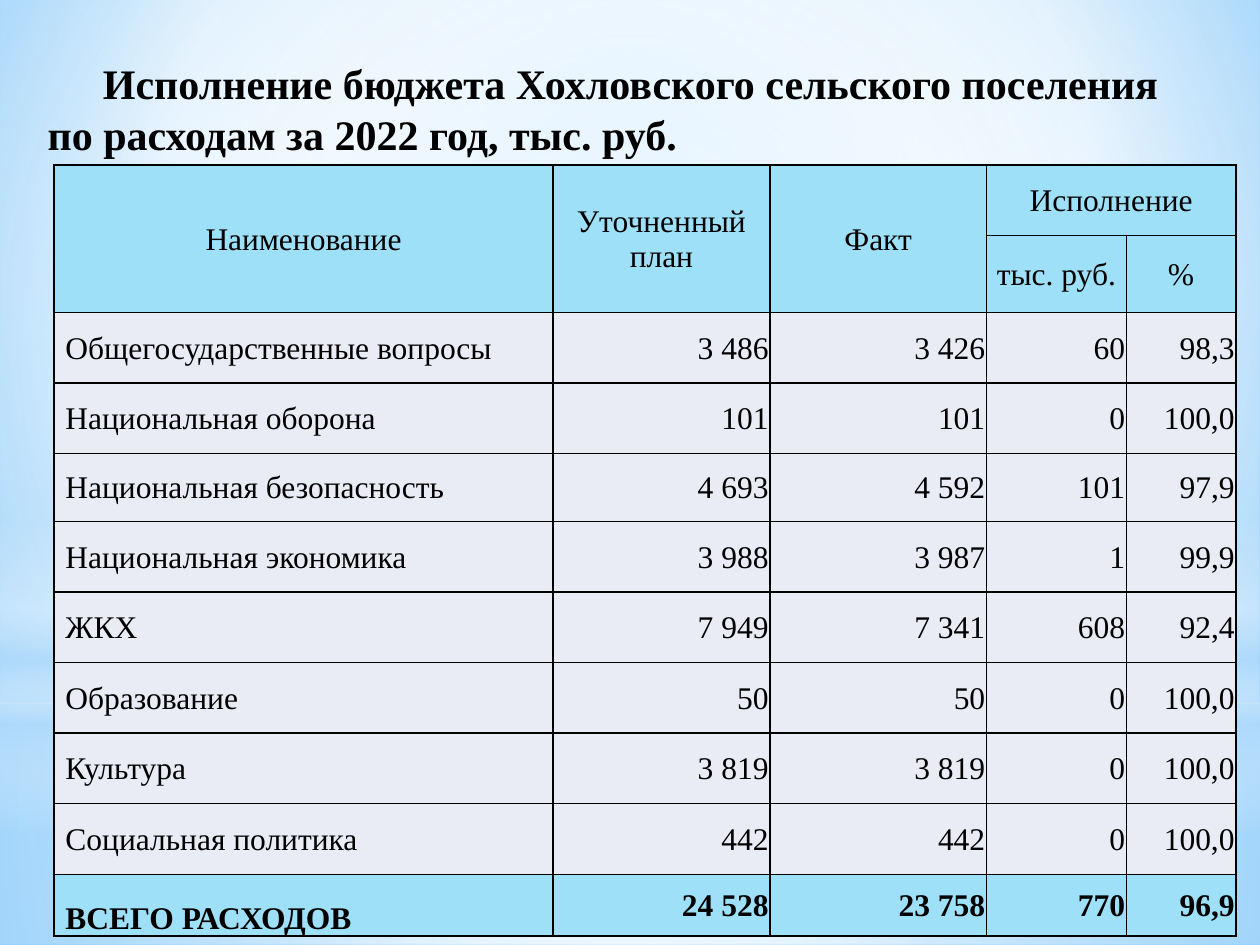
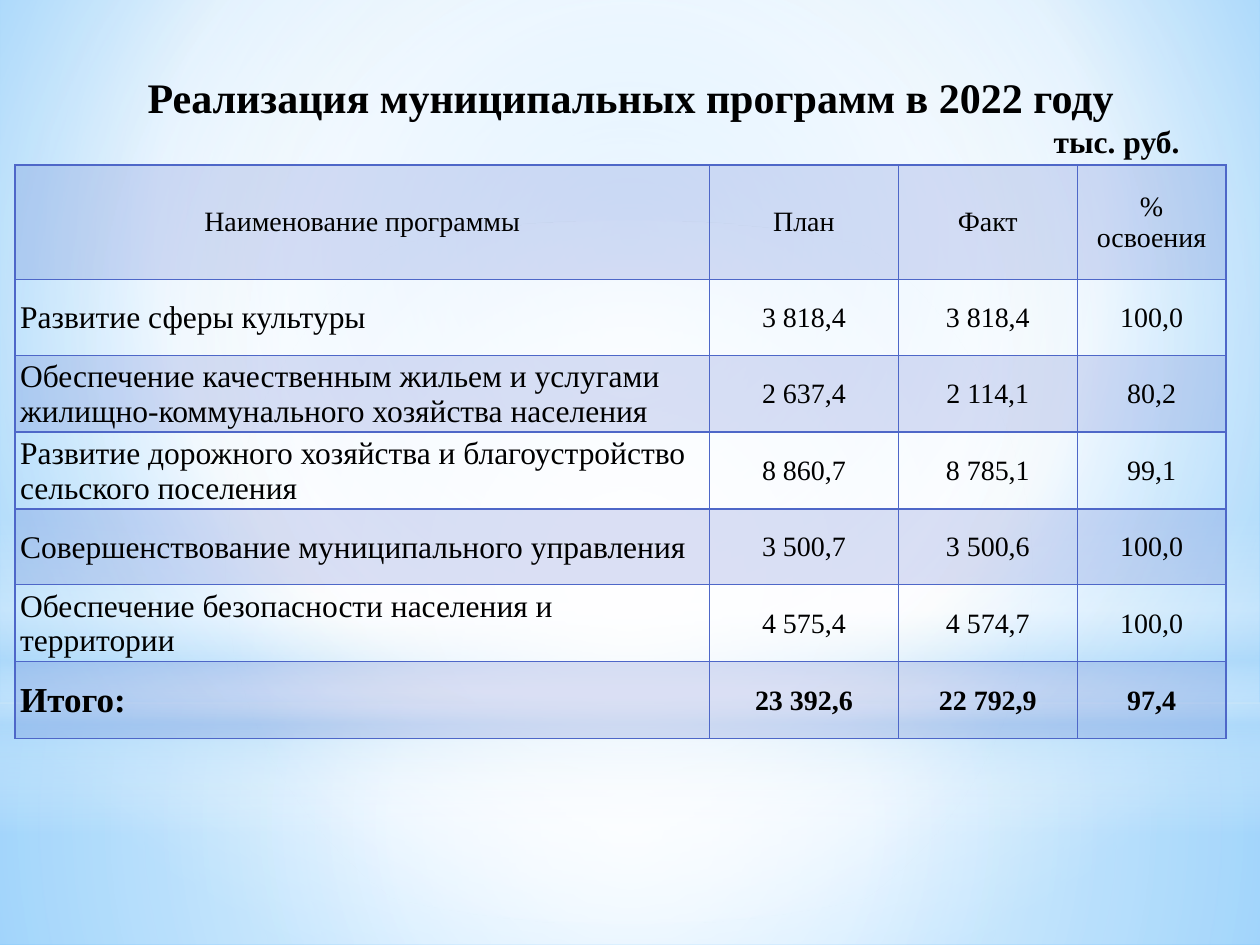
"""Build two slides on the 2022 budget of a rural settlement."""
from dataclasses import dataclass, replace

import lxml.etree
import pptx
import pptx.dml.color
import pptx.enum.shapes
import pptx.enum.text
import pptx.oxml.ns
import pptx.util

Inches = pptx.util.Inches
qualify = pptx.oxml.ns.qn
Align = pptx.enum.text.PP_ALIGN
Anchor = pptx.enum.text.MSO_ANCHOR
Preset = pptx.enum.shapes.MSO_SHAPE

FONT = "Times New Roman"
BLACK = "000000"
WHITE = "FFFFFF"
HAZE = "B4DCFA"
AQUA = "9EE0F8"
LAVENDER = "E9EBF5"
INDIGO = "4E67C8"


@dataclass(frozen=True)
class Gradient:
    """Stops of (position, colour, opacity), spread round a focus or along an angle."""
    stops: tuple[tuple[int, str, int], ...]
    focus: tuple[int, int, int, int] | None = (50, 50, 50, 50)
    angle: int = 0


@dataclass(frozen=True)
class Band:
    """Full-width backdrop shape."""
    preset: int
    top: float
    height: float
    gradient: Gradient


@dataclass(frozen=True)
class CellStyle:
    """Look of one table cell; margins are left, top, right, bottom."""
    size: int = 18
    bold: bool = False
    align: int = Align.CENTER
    anchor: int = Anchor.MIDDLE
    fill: str | None = None
    opacity: int = 100
    margins: tuple[float, float, float, float] = (0.01, 0.01, 0.01, 0)


@dataclass(frozen=True)
class Row:
    """Table row with one style for its label and one for its values."""
    height: float
    label: CellStyle
    value: CellStyle
    texts: tuple[str, ...]


@dataclass(frozen=True)
class TableLayout:
    """Whole table; merges are first row, first column, last row, last column."""
    left: float
    top: float
    widths: tuple[float, ...]
    rows: tuple[Row, ...]
    border: str
    merges: tuple[tuple[int, int, int, int], ...] = ()


@dataclass(frozen=True)
class TitleLine:
    """One line of a slide title."""
    text: str
    size: int
    align: int


BACKGROUND = Gradient(((0, "9ED5FF", 100), (60, WHITE, 100), (100, "5BB9FF", 100)), (20, 10, 20, 60))
BANDS = (
    Band(Preset.RECTANGLE, 5.58, 1.92, Gradient(((0, WHITE, 91), (37, WHITE, 76), (100, HAZE, 79)))),
    Band(Preset.RECTANGLE, 0, 5.58, Gradient(((0, WHITE, 89), (48, WHITE, 62), (100, HAZE, 79)))),
    Band(Preset.RECTANGLE, 4.12, 2.5, Gradient(
        ((0, WHITE, 0), (29, WHITE, 30), (45, HAZE, 40), (55, WHITE, 26), (65, HAZE, 60), (100, WHITE, 0)),
        None, 90)),
    Band(Preset.OVAL, 1.75, 5.58, Gradient(((0, WHITE, 100), (56, WHITE, 0)))),
)

EXPENSE_HEADER = CellStyle(fill=AQUA)
EXPENSE_VALUE = CellStyle(fill=LAVENDER, align=Align.RIGHT)
EXPENSE_LABEL = replace(EXPENSE_VALUE, align=Align.LEFT, margins=(0.09, 0.01, 0.01, 0))
EXPENSE_TOTAL = replace(EXPENSE_VALUE, fill=AQUA, bold=True)
EXPENSE_TOTAL_LABEL = replace(EXPENSE_LABEL, fill=AQUA, bold=True, anchor=Anchor.BOTTOM)
EXPENSES = (
    ("Общегосударственные вопросы", "3 486", "3 426", "60", "98,3"),
    ("Национальная оборона", "101", "101", "0", "100,0"),
    ("Национальная безопасность", "4 693", "4 592", "101", "97,9"),
    ("Национальная экономика", "3 988", "3 987", "1", "99,9"),
    ("ЖКХ", "7 949", "7 341", "608", "92,4"),
    ("Образование", "50", "50", "0", "100,0"),
    ("Культура", "3 819", "3 819", "0", "100,0"),
    ("Социальная политика", "442", "442", "0", "100,0"),
)
EXPENSE_TABLE = TableLayout(
    0.43, 1.31, (3.96, 1.72, 1.72, 1.11, 0.87),
    (
        Row(0.56, EXPENSE_HEADER, EXPENSE_HEADER, ("Наименование", "Уточненный план", "Факт", "Исполнение", "")),
        Row(0.56, EXPENSE_HEADER, EXPENSE_HEADER, ("", "", "", "тыс. руб.", "%")),
        *(Row(0.54 if texts[0] == "Национальная безопасность" else 0.56, EXPENSE_LABEL, EXPENSE_VALUE, texts)
          for texts in EXPENSES),
        Row(0.49, EXPENSE_TOTAL_LABEL, EXPENSE_TOTAL, ("ВСЕГО РАСХОДОВ", "24 528", "23 758", "770", "96,9")),
    ),
    BLACK,
    (*((0, column, 1, column) for column in range(3)), (0, 3, 0, 4)),
)

PROGRAM_VALUE = CellStyle(size=16)
PROGRAM_LABEL = CellStyle(align=Align.LEFT, margins=(0.04, 0.01, 0.01, 0))
TINT = {"fill": INDIGO, "opacity": 20}
PROGRAM_HEADER = replace(PROGRAM_VALUE, margins=(0.1, 0.05, 0.1, 0.05), **TINT)
PROGRAMS = (
    (0.6, ("Развитие сферы культуры", "3 818,4", "3 818,4", "100,0")),
    (0.56, ("Обеспечение качественным жильем и услугами жилищно-коммунального хозяйства населения",
            "2 637,4", "2 114,1", "80,2")),
    (0.56, ("Развитие дорожного хозяйства и благоустройство сельского поселения",
            "8 860,7", "8 785,1", "99,1")),
    (0.6, ("Совершенствование муниципального управления", "3 500,7", "3 500,6", "100,0")),
    (0.6, ("Обеспечение безопасности населения и территории", "4 575,4", "4 574,7", "100,0")),
)
PROGRAM_TABLE = TableLayout(
    0.12, 1.31, (5.51, 1.5, 1.42, 1.18),
    (
        Row(0.91, PROGRAM_HEADER, PROGRAM_HEADER, ("Наименование программы", "План", "Факт", "% освоения")),
        *(Row(height, replace(PROGRAM_LABEL, **tint), replace(PROGRAM_VALUE, **tint), texts)
          for index, (height, texts) in enumerate(PROGRAMS)
          for tint in [TINT if index % 2 else {}]),
        Row(0.61, replace(PROGRAM_LABEL, size=20, bold=True, **TINT), replace(PROGRAM_VALUE, bold=True, **TINT),
            ("Итого:", "23 392,6", "22 792,9", "97,4")),
    ),
    INDIGO,
)


def color(value: str) -> pptx.dml.color.RGBColor:
    """Turn a hex string into a colour."""
    return pptx.dml.color.RGBColor.from_string(value)


def add_node(parent, tag: str, **attributes):
    """Append a drawing element to its parent."""
    return lxml.etree.SubElement(parent, qualify(f"a:{tag}"), {key: str(value) for key, value in attributes.items()})


def set_gradient(fill, owner, gradient: Gradient) -> None:
    """Replace the default gradient of a fill inside its owner element."""
    fill.gradient()
    node = next(owner.iter(qualify("a:gradFill")))
    for child in list(node):
        node.remove(child)
    stops = add_node(node, "gsLst")
    for position, value, opacity in gradient.stops:
        stop = add_node(stops, "gs", pos=position * 1000)
        add_node(add_node(stop, "srgbClr", val=value), "alpha", val=opacity * 1000)
    if gradient.focus is None:
        add_node(node, "lin", ang=gradient.angle * 60000, scaled=0)
    else:
        sides = {side: amount * 1000 for side, amount in zip("ltrb", gradient.focus)}
        add_node(add_node(node, "path", path="circle"), "fillToRect", **sides)


def write_text(paragraph, text: str, *, size: int, bold: bool = False, align: int = Align.LEFT) -> None:
    """Write one formatted run into a paragraph."""
    paragraph.alignment = align
    run = paragraph.add_run()
    run.text = text
    run.font.name = FONT
    run.font.size = pptx.util.Pt(size)
    run.font.bold = bold
    run.font.color.rgb = color(BLACK)


def add_backdrop(presentation, slide) -> None:
    """Paint the background and the translucent bands."""
    set_gradient(slide.background.fill, slide.element, BACKGROUND)
    for band in BANDS:
        shape = slide.shapes.add_shape(
            band.preset, 0, Inches(band.top), presentation.slide_width, Inches(band.height))
        shape.shadow.inherit = False
        shape.line.fill.background()
        set_gradient(shape.fill, shape.element.spPr, band.gradient)


def add_title(slide, left: float, top: float, width: float, lines: tuple[TitleLine, ...]) -> None:
    """Add the title lines as one text box."""
    frame = slide.shapes.add_textbox(Inches(left), Inches(top), Inches(width), Inches(0.9)).text_frame
    frame.word_wrap = True
    frame.margin_top = Inches(0.1)
    for index, line in enumerate(lines):
        paragraph = frame.add_paragraph() if index else frame.paragraphs[0]
        write_text(paragraph, line.text, size=line.size, bold=True, align=line.align)


def format_cell(cell, style: CellStyle, border: str) -> None:
    """Set margins, anchor, fill and borders of a cell."""
    cell.margin_left, cell.margin_top, cell.margin_right, cell.margin_bottom = map(Inches, style.margins)
    cell.vertical_anchor = style.anchor
    properties = cell._tc.get_or_add_tcPr()
    if style.fill is None:
        cell.fill.background()
    else:
        cell.fill.solid()
        cell.fill.fore_color.rgb = color(style.fill)
        if style.opacity < 100:
            add_node(next(properties.iter(qualify("a:srgbClr"))), "alpha", val=style.opacity * 1000)
    for index, side in enumerate("LRTB"):
        line = add_node(properties, f"ln{side}", w=pptx.util.Pt(1))
        add_node(add_node(line, "solidFill"), "srgbClr", val=border)
        properties.insert(index, line)


def add_table(slide, layout: TableLayout) -> None:
    """Add a table with its widths, heights, texts and merged cells."""
    heights = [row.height for row in layout.rows]
    table = slide.shapes.add_table(
        len(heights), len(layout.widths), Inches(layout.left), Inches(layout.top),
        Inches(sum(layout.widths)), Inches(sum(heights))).table
    table.first_row = table.horz_banding = False
    for column, width in zip(table.columns, layout.widths):
        column.width = Inches(width)
    for row_index, row in enumerate(layout.rows):
        table.rows[row_index].height = Inches(row.height)
        for column_index, text in enumerate(row.texts):
            cell = table.cell(row_index, column_index)
            style = row.value if column_index else row.label
            format_cell(cell, style, layout.border)
            if text:
                write_text(cell.text_frame.paragraphs[0], text,
                           size=style.size, bold=style.bold, align=style.align)
    for top, left, bottom, right in layout.merges:
        table.cell(top, left).merge(table.cell(bottom, right))


def add_slide(presentation):
    """Add a blank slide with the shared backdrop."""
    slide = presentation.slides.add_slide(presentation.slide_layouts[6])
    add_backdrop(presentation, slide)
    return slide


def main() -> None:
    """Build and save the presentation."""
    presentation = pptx.Presentation()
    presentation.slide_width, presentation.slide_height = Inches(10), Inches(7.5)

    expenses = add_slide(presentation)
    add_title(expenses, 0.28, 0.36, 9.45, (
        TitleLine("Исполнение бюджета Хохловского сельского поселения", 24, Align.CENTER),
        TitleLine("по расходам за 2022 год, тыс. руб.", 24, Align.LEFT),
    ))
    add_table(expenses, EXPENSE_TABLE)

    programs = add_slide(presentation)
    add_title(programs, 0.55, 0.47, 8.91, (
        TitleLine("Реализация муниципальных программ в 2022 году", 24, Align.CENTER),
        TitleLine("тыс. руб.", 18, Align.RIGHT),
    ))
    add_table(programs, PROGRAM_TABLE)

    presentation.save("out.pptx")


if __name__ == "__main__":
    main()
